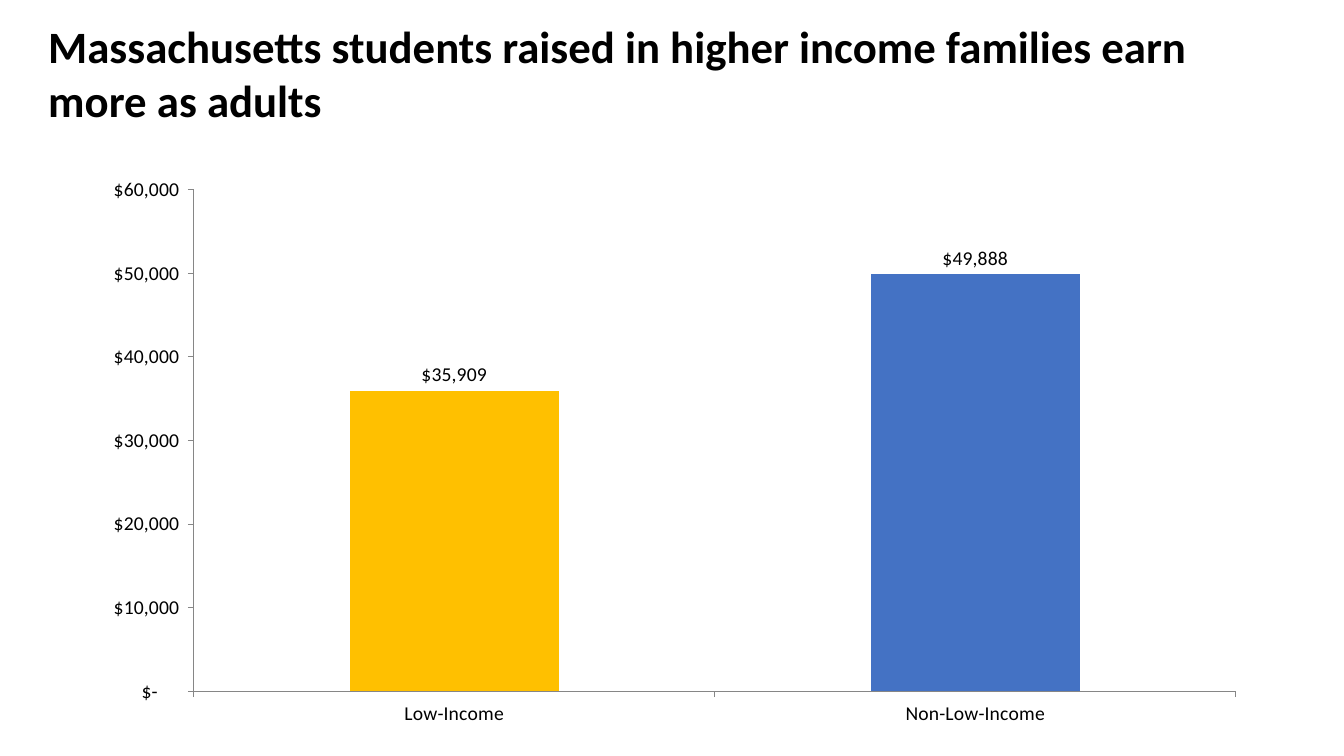
from dataclasses import dataclass

import pptx
import pptx.chart.data
import pptx.dml.color
import pptx.enum.chart
import pptx.util
from pptx.util import Inches


@dataclass(frozen=True)
class Theme:
    font: str = "Calibri"
    ink: str = "000000"
    axis: str = "868686"
    low_income: str = "FFC000"
    higher_income: str = "4472C4"
    title_size: int = 32
    chart_size: int = 14


THEME = Theme()
DOLLARS = r'_("$"* #,##0_);_("$"* \(#,##0\);_("$"* "-"??_);_(@_)'
EARNINGS = {
    "Low-Income": (35909, THEME.low_income),
    "Non-Low-Income": (49888, THEME.higher_income),
}


def rgb(colour):
    return pptx.dml.color.RGBColor.from_string(colour)


def style_font(font, size, bold=False, colour=THEME.ink):
    font.name = THEME.font
    font.size = pptx.util.Pt(size)
    font.bold = bold
    font.color.rgb = rgb(colour)


def add_text(slide, text, *, left, top, width, height, size, bold=False):
    frame = slide.shapes.add_textbox(
        Inches(left), Inches(top), Inches(width), Inches(height)
    ).text_frame
    frame.word_wrap = True
    sentence = frame.paragraphs[0].add_run()
    sentence.text = text
    style_font(sentence.font, size, bold)


def style_axis(axis):
    axis.has_major_gridlines = False
    axis.major_tick_mark = pptx.enum.chart.XL_TICK_MARK.OUTSIDE
    axis.minor_tick_mark = pptx.enum.chart.XL_TICK_MARK.NONE
    axis.format.line.color.rgb = rgb(THEME.axis)
    axis.format.line.width = pptx.util.Pt(0.75)
    style_font(axis.tick_labels.font, THEME.chart_size)


def add_earnings_chart(slide, earnings, *, left, top, width, height):
    figures = pptx.chart.data.CategoryChartData(number_format=DOLLARS)
    figures.categories = list(earnings)
    figures.add_series("Series 1", [value for value, _ in earnings.values()])
    chart = slide.shapes.add_chart(
        pptx.enum.chart.XL_CHART_TYPE.COLUMN_CLUSTERED,
        Inches(left), Inches(top), Inches(width), Inches(height), figures,
    ).chart
    chart.has_title = False
    chart.has_legend = False
    style_font(chart.font, THEME.chart_size)

    style_axis(chart.category_axis)
    style_axis(chart.value_axis)
    chart.value_axis.minimum_scale = 0
    chart.value_axis.maximum_scale = 60000
    chart.value_axis.major_unit = 10000
    chart.value_axis.tick_labels.number_format = DOLLARS
    chart.value_axis.tick_labels.number_format_is_linked = False

    columns = chart.plots[0]
    columns.gap_width = 150
    columns.vary_by_categories = False
    series = columns.series[0]
    series.format.fill.solid()
    series.format.fill.fore_color.rgb = rgb(THEME.higher_income)
    for index, (_, colour) in enumerate(earnings.values()):
        fill = series.points[index].format.fill
        fill.solid()
        fill.fore_color.rgb = rgb(colour)

    labels = series.data_labels
    labels.show_value = True
    labels.position = pptx.enum.chart.XL_LABEL_POSITION.OUTSIDE_END
    labels.number_format = DOLLARS
    labels.number_format_is_linked = False
    style_font(labels.font, THEME.chart_size)


def main():
    deck = pptx.Presentation()
    deck.slide_width = Inches(13.33)
    deck.slide_height = Inches(7.5)
    slide = deck.slides.add_slide(deck.slide_layouts[6])
    add_text(
        slide,
        "Massachusetts students raised in higher income families earn more as adults",
        left=0.38, top=0.14, width=12.11, height=1.18,
        size=THEME.title_size, bold=True,
    )
    add_earnings_chart(
        slide, EARNINGS, left=0.85, top=1.65, width=11.64, height=5.66
    )
    deck.save("out.pptx")


if __name__ == "__main__":
    main()
